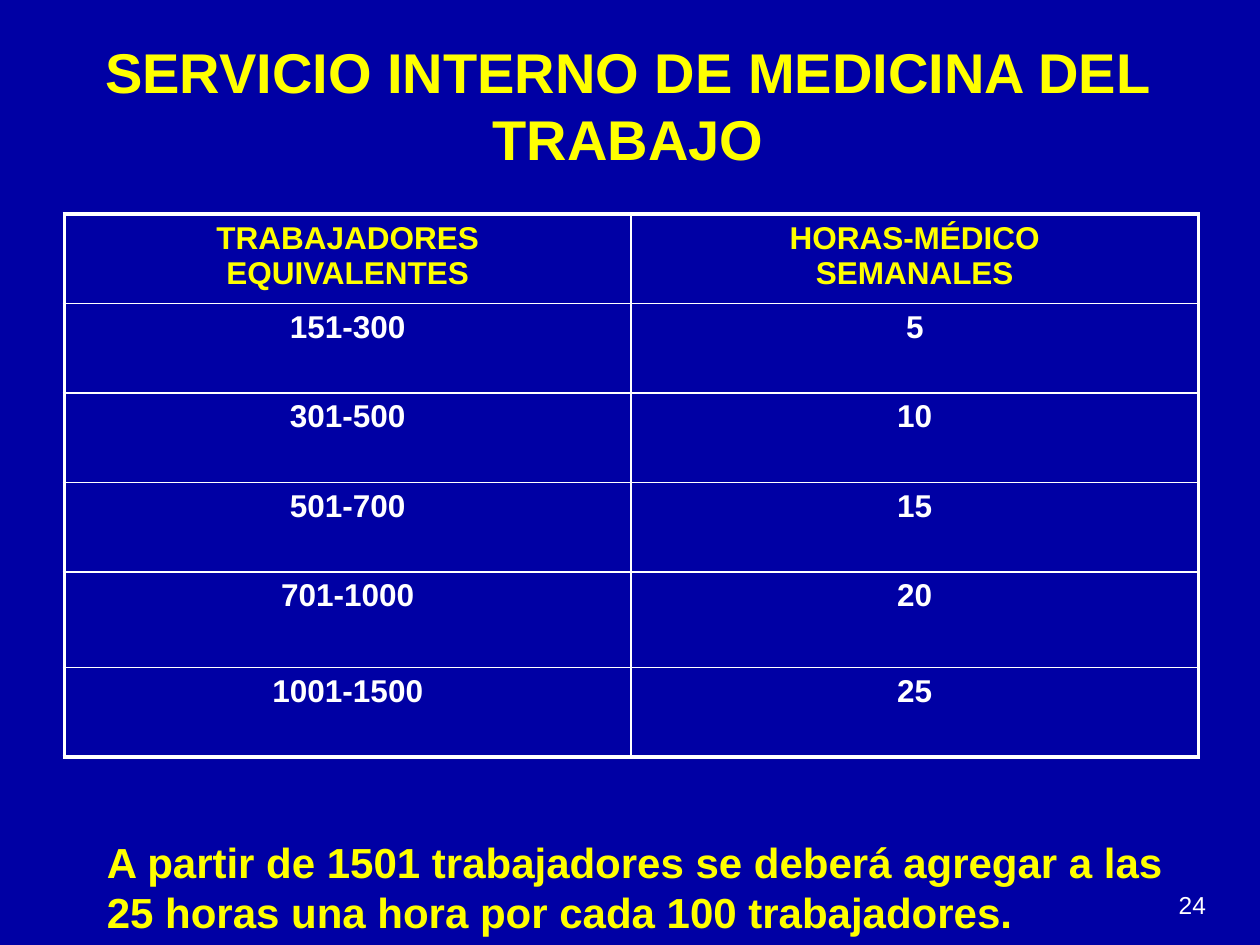
from dataclasses import dataclass

from lxml import etree
from pptx import Presentation
from pptx import util as u
from pptx.dml.color import RGBColor
from pptx.enum import text
from pptx.oxml import ns

Inches, Pt = u.Inches, u.Pt


@dataclass(frozen=True)
class Theme:
    font: str = "Arial"
    background: str = "0000A4"
    accent: str = "FFFF00"
    light: str = "FFFFFF"
    title: int = 32
    note: int = 24
    table: int = 18
    number: int = 14
    outer_line: float = 2.25
    inner_line: float = 1


THEME = Theme()
ROWS = [
    ("TRABAJADORES\nEQUIVALENTES", "HORAS-MÉDICO\nSEMANALES"),
    ("151-300", "5"),
    ("301-500", "10"),
    ("501-700", "15"),
    ("701-1000", "20"),
    ("1001-1500", "25"),
]
ROW_HEIGHTS = [0.71, 0.71, 0.71, 0.71, 0.76, 0.71]


def write(tf, content, size, color, align, bold=True):
    tf.text = content
    for p in tf.paragraphs:
        p.alignment = align
        for r in p.runs:
            for name, value in dict(name=THEME.font, size=Pt(size), bold=bold).items():
                setattr(r.font, name, value)
            r.font.color.rgb = RGBColor.from_string(color)


def add_text(s, box, content, size, color, align, anchor, bold=True):
    tf = s.shapes.add_textbox(*map(Inches, box)).text_frame
    tf.word_wrap = True
    tf.vertical_anchor = anchor
    write(tf, content, size, color, align, bold)


def set_border(cell, side, width):
    line = etree.SubElement(cell._tc.get_or_add_tcPr(), ns.qn(f"a:ln{side}"), w=str(Pt(width)))
    fill = etree.SubElement(line, ns.qn("a:solidFill"))
    etree.SubElement(fill, ns.qn("a:srgbClr"), val=THEME.light)


def add_hours_table(s, box):
    last_row, last_col = len(ROWS) - 1, len(ROWS[0]) - 1
    table = s.shapes.add_table(len(ROWS), len(ROWS[0]), *map(Inches, box)).table
    for column in table.columns:
        column.width = Inches(box[2] / len(ROWS[0]))
    for i, (values, height) in enumerate(zip(ROWS, ROW_HEIGHTS)):
        table.rows[i].height = Inches(height)
        for j, value in enumerate(values):
            cell = table.cell(i, j)
            color = THEME.accent if i == 0 else THEME.light
            write(cell.text_frame, value, THEME.table, color, text.PP_ALIGN.CENTER)
            # Heavy frame around the table, thin lines inside
            outer = {"L": j == 0, "R": j == last_col, "T": i == 0, "B": i == last_row}
            for side, is_outer in outer.items():
                set_border(cell, side, THEME.outer_line if is_outer else THEME.inner_line)
            cell.fill.background()


def build_slide(prs):
    s = prs.slides.add_slide(prs.slide_layouts[6])
    s.background.fill.solid()
    s.background.fill.fore_color.rgb = RGBColor.from_string(THEME.background)
    align, anchor = text.PP_ALIGN, text.MSO_ANCHOR

    # Slide number
    add_text(s, (7.17, 6.83, 2.5, 0.52), "24", THEME.number, THEME.light,
             align.RIGHT, anchor.BOTTOM, bold=False)
    # Title
    add_text(s, (0.33, 0.25, 9.31, 1.16), "SERVICIO INTERNO DE MEDICINA DEL TRABAJO",
             THEME.title, THEME.accent, align.CENTER, anchor.MIDDLE)
    # Weekly doctor hours by number of workers
    add_hours_table(s, (0.51, 1.7, 9, sum(ROW_HEIGHTS)))
    # Note on larger workforces
    add_text(s, (0.75, 6.59, 8.76, 0.9),
             "A partir de 1501 trabajadores se deberá agregar a las 25 horas "
             "una hora por cada 100 trabajadores.",
             THEME.note, THEME.accent, align.LEFT, anchor.TOP)


def main():
    prs = Presentation()
    prs.slide_width, prs.slide_height = Inches(10), Inches(7.5)
    build_slide(prs)
    prs.save("out.pptx")


if __name__ == "__main__":
    main()
